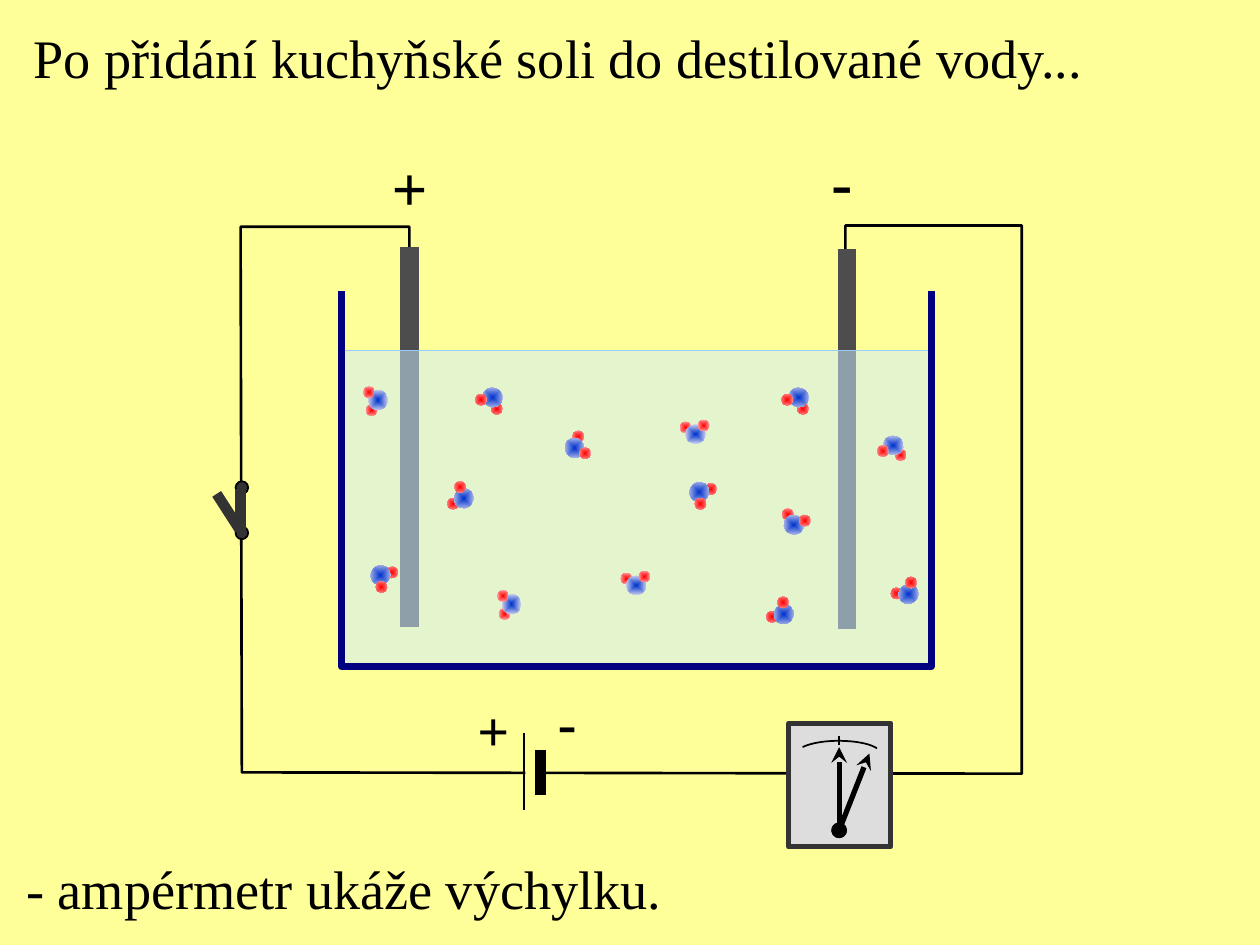
import math
from typing import NamedTuple

from lxml import etree
from pptx import Presentation
from pptx import util as u
from pptx.dml.color import RGBColor
from pptx.enum import shapes, text
from pptx.oxml.ns import qn

PX = 9144  # EMU per px, 100 px to the inch
FONT = "Times New Roman"
COLORS = {
    "paper": "FFFF99", "ink": "000000", "electrode": "4D4D4D",
    "water": "CCECFF", "surface": "99CCFF", "beaker": "000080",
    "switch": "333333", "meter": "DDDDDD",
    "hydrogen": "FF0000", "hydrogen_rim": "FFA4A4",
    "oxygen": "0033CC", "oxygen_rim": "D5D6EF",
}
RECT = shapes.MSO_SHAPE.RECTANGLE
OVAL = shapes.MSO_SHAPE.OVAL


class Box(NamedTuple):
    left: int
    top: int
    width: int
    height: int


class Molecule(NamedTuple):
    left: int  # of the oxygen atom
    top: int
    turn: float


class Line(NamedTuple):
    start: tuple[int, int]
    end: tuple[int, int]
    color: str
    weight: float


class Label(NamedTuple):
    box: Box
    words: str
    size: int
    bold: bool


MOLECULES = [Molecule(*m) for m in (
    (294, 449, 307.5), (448, 348, 248.9), (360, 388, 114.6), (292, 310, 83.1),
    (547, 383, 306.4), (622, 409, 201.1), (398, 472, 86.4), (383, 308, 31.4),
    (544, 337, 175.3), (614, 480, 128.9), (497, 457, 174.9), (626, 308, 31.4),
    (701, 346, 13.7), (713, 464, 144.5),
)]
HYDROGEN_OFFSETS = ((7.4, 6), (-7, 6.3))  # from the oxygen centre, before turning
ELECTRODES = [
    Line((325, 196), (325, 498), "electrode", 10.5),
    Line((672, 198), (672, 499), "electrode", 10.5),
]
BATTERY = [
    Line((416, 582), (416, 643), "ink", 1.5),
    Line((429, 595), (429, 631), "ink", 6),
]
SWITCH = [
    Line((191, 422), (191, 388), "switch", 6),
    Line((190, 420), (172, 392), "switch", 6),
]
NEEDLES = [
    Line((666, 593), (666, 659), "ink", 3),
    Line((690, 598), (666, 659), "ink", 3),
]
SCALE_TICK = Line((666, 584), (666, 591), "ink", 1)
SCALE_CURVES = [
    ((637, 593), (643, 590), (654, 588), (665, 588)),
    ((665, 588), (678, 588), (690, 590), (696, 594)),
]
WIRE = [(325, 199), (325, 180), (191, 180), (192, 613),
        (811, 614), (811, 179), (671, 179), (671, 198)]
BEAKER = [(271, 231), (271, 529), (739, 529), (739, 231)]
LABELS = [
    Label(Box(301, 113, 49, 70), "+", 36, True),
    Label(Box(650, 108, 37, 70), "-", 36, True),
    Label(Box(369, 547, 45, 63), "+", 32, True),
    Label(Box(433, 541, 35, 63), "-", 32, True),
    Label(Box(17, 14, 862, 62), "Po přidání kuchyňské soli do destilované vody...", 31, False),
    Label(Box(11, 674, 549, 62), "- ampérmetr ukáže výchylku.", 31, False),
]


def emu(*lengths: float) -> list[int]:
    return [round(length * PX) for length in lengths]


def rgb(name: str) -> RGBColor:
    return RGBColor.from_string(COLORS[name])


def set_line(shape, color: str, weight: float) -> None:
    shape.line.color.rgb = rgb(color)
    shape.line.width = u.Pt(weight)


def add_shape(page, kind, box, fill: str, line: str = "", weight: float = 1):
    shape = page.shapes.add_shape(kind, *emu(*box))
    shape.shadow.inherit = False
    shape.fill.solid()
    shape.fill.fore_color.rgb = rgb(fill)
    if line:
        set_line(shape, line, weight)
    else:
        shape.line.fill.background()
    return shape


def add_line(page, line: Line):
    connector = page.shapes.add_connector(
        shapes.MSO_CONNECTOR.STRAIGHT, *emu(*line.start, *line.end))
    set_line(connector, line.color, line.weight)
    etree.SubElement(connector._element.spPr, qn("a:effectLst"))
    return connector


def add_needle(page, line: Line) -> None:
    outline = add_line(page, line).line._get_or_add_ln()
    for tag, end in (("a:headEnd", "stealth"), ("a:tailEnd", "oval")):
        etree.SubElement(outline, qn(tag), type=end)


def add_path(page, points, color: str, weight: float) -> None:
    corners = [tuple(emu(*point)) for point in points]
    builder = page.shapes.build_freeform(*corners[0], scale=1.0)
    builder.add_line_segments(corners[1:], close=False)
    shape = builder.convert_to_shape()
    shape.shadow.inherit = False
    shape.fill.background()
    set_line(shape, color, weight)


def curve_points(curve, steps: int = 12) -> list[tuple[float, float]]:
    weights = [((1 - t) ** 3, 3 * t * (1 - t) ** 2, 3 * t * t * (1 - t), t ** 3)
               for t in (i / steps for i in range(steps + 1))]
    return [tuple(sum(w * p[axis] for w, p in zip(row, curve)) for axis in (0, 1))
            for row in weights]


def add_atom(page, x: float, y: float, width: int, height: int,
             turn: float, element: str) -> None:
    box = Box(x - width / 2, y - height / 2, width, height)
    atom = add_shape(page, OVAL, box, element)
    atom.rotation = turn
    # Radial gradient from the centre to the rim
    gradient = etree.Element(qn("a:gradFill"), rotWithShape="1")
    stops = etree.SubElement(gradient, qn("a:gsLst"))
    for position, name in (("0", element), ("100000", element + "_rim")):
        stop = etree.SubElement(stops, qn("a:gs"), pos=position)
        etree.SubElement(stop, qn("a:srgbClr"), val=COLORS[name])
    shade = etree.SubElement(gradient, qn("a:path"), path="shape")
    etree.SubElement(shade, qn("a:fillToRect"), dict.fromkeys("ltrb", "50000"))
    properties = atom._element.spPr
    properties.replace(properties.find(qn("a:solidFill")), gradient)


def add_molecule(page, molecule: Molecule) -> None:
    x, y = molecule.left + 8, molecule.top + 7.5
    angle = math.radians(molecule.turn)
    cos, sin = math.cos(angle), math.sin(angle)
    first, second = [(x + dx * cos - dy * sin, y + dx * sin + dy * cos)
                     for dx, dy in HYDROGEN_OFFSETS]
    add_atom(page, *first, 9, 9, molecule.turn, "hydrogen")
    add_atom(page, x, y, 16, 15, molecule.turn, "oxygen")
    add_atom(page, *second, 9, 9, molecule.turn, "hydrogen")


def add_label(page, label: Label) -> None:
    frame = page.shapes.add_textbox(*emu(*label.box)).text_frame
    frame.word_wrap = False
    frame.auto_size = text.MSO_AUTO_SIZE.SHAPE_TO_FIT_TEXT
    para = frame.paragraphs[0]
    span = para.add_run()
    span.text = label.words
    span.font.name = FONT
    span.font.size = u.Pt(label.size)
    span.font.bold = label.bold
    span.font.color.rgb = rgb("ink")


def main() -> None:
    deck = Presentation()
    deck.slide_width, deck.slide_height = emu(1000, 750)
    page = deck.slides.add_slide(deck.slide_layouts[6])
    page.background.fill.solid()
    page.background.fill.fore_color.rgb = rgb("paper")

    # Circuit and electrodes
    add_path(page, WIRE, "ink", 1.5)
    for electrode in ELECTRODES:
        add_line(page, electrode)

    # Beaker with translucent water
    water = add_shape(page, RECT, Box(271, 278, 469, 251), "water", "surface", 0.75)
    color = water._element.spPr.find(qn("a:solidFill"))[0]
    etree.SubElement(color, qn("a:alpha"), val="52000")
    add_path(page, BEAKER, "beaker", 4)
    for molecule in MOLECULES:
        add_molecule(page, molecule)

    # Battery
    add_shape(page, RECT, Box(417, 588, 10, 49), "paper")
    for plate in BATTERY:
        add_line(page, plate)

    # Switch
    add_shape(page, RECT, Box(186, 390, 10, 29), "paper")
    for top in (382, 418):
        add_shape(page, OVAL, Box(187, top, 10, 10), "switch", "ink", 1)
    for lever in SWITCH:
        add_line(page, lever)

    # Ammeter
    add_shape(page, RECT, Box(626, 574, 81, 98), "meter", "switch", 3)
    left, right = map(curve_points, SCALE_CURVES)
    add_path(page, left + right[1:], "ink", 1)
    add_line(page, SCALE_TICK)
    for needle in NEEDLES:
        add_needle(page, needle)

    # Signs and sentences
    for label in LABELS:
        add_label(page, label)
    deck.save("out.pptx")


if __name__ == "__main__":
    main()
